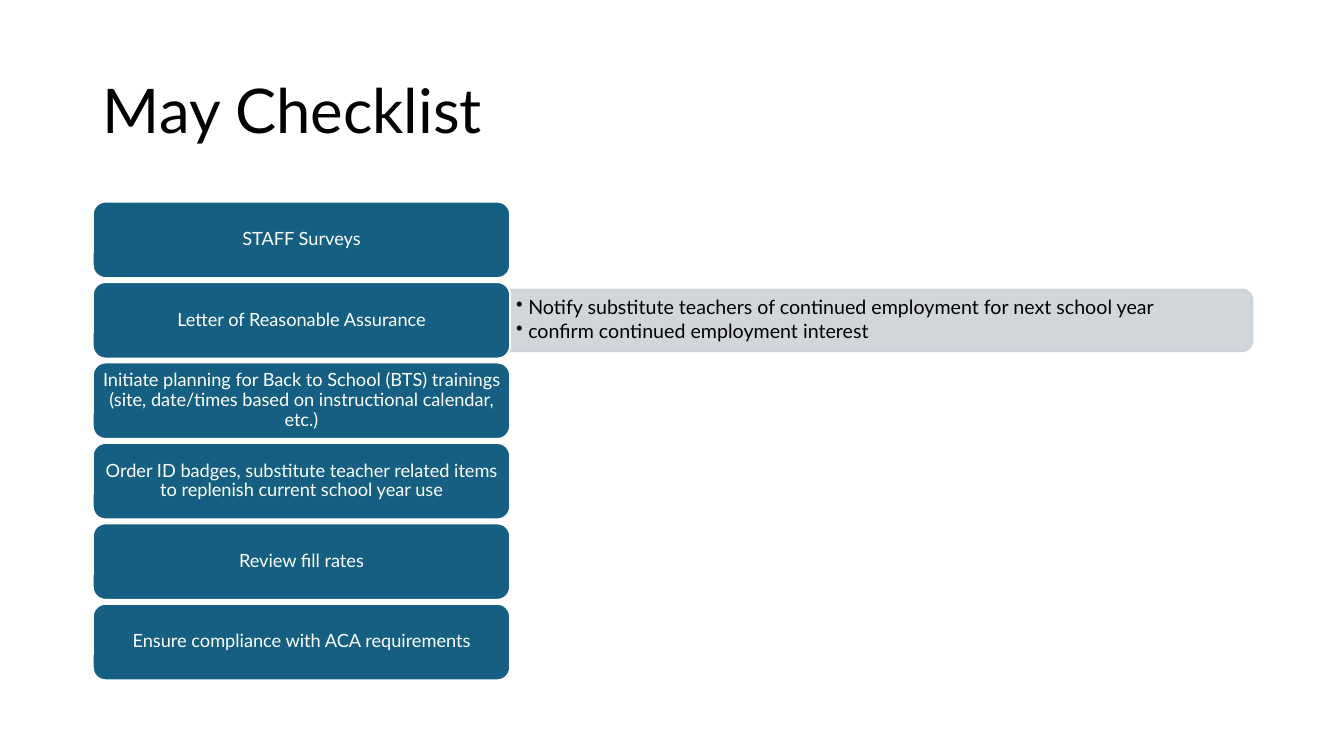
"""Build the May checklist slide: a column of task cards with a detail bar."""
from dataclasses import dataclass

from lxml import etree
from pptx import Presentation
from pptx import util as u
from pptx.dml.color import RGBColor
from pptx.enum import shapes, text
from pptx.oxml.ns import qn

BLACK = RGBColor(0x00, 0x00, 0x00)
WHITE = RGBColor(0xFF, 0xFF, 0xFF)
TEAL = RGBColor(0x15, 0x60, 0x82)
SILVER = RGBColor(0xCC, 0xD2, 0xD8)
FONT = "Lato"

MARGIN = 0.92
FIRST_ROW = 2.0
ROW_PITCH = 3.99 / 5
CARD_WIDTH = 4.14
CARD_HEIGHT = 0.76
BAR_LEFT = MARGIN + CARD_WIDTH
BAR_WIDTH = 7.36
BAR_HEIGHT = 0.61
INDENT = 0.12


@dataclass(frozen=True)
class Task:
    """A card on the checklist and the details beside it."""

    label: str
    details: tuple[str, ...] = ()


TASKS = (
    Task("STAFF Surveys"),
    Task("Letter of Reasonable Assurance", (
        "Notify substitute teachers of continued employment for next school year",
        "confirm continued employment interest",
    )),
    Task("Initiate planning for Back to School (BTS) trainings "
         "(site, date/times based on instructional calendar, etc.)"),
    Task("Order ID badges, substitute teacher related items "
         "to replenish current school year use"),
    Task("Review fill rates"),
    Task("Ensure compliance with ACA requirements"),
)


def write(box, lines: tuple[str, ...], *, size: float, color: RGBColor,
          align=text.PP_ALIGN.LEFT, after: float = 0, bullet: bool = False,
          insets: tuple[float, float] = (0.1, 0.05)) -> None:
    """Fill a shape with vertically centred paragraphs."""
    frame = box.text_frame
    frame.word_wrap = True
    frame.auto_size = text.MSO_AUTO_SIZE.NONE
    frame.vertical_anchor = text.MSO_ANCHOR.MIDDLE
    frame.margin_left = frame.margin_right = u.Inches(insets[0])
    frame.margin_top = frame.margin_bottom = u.Inches(insets[1])
    for index, line in enumerate(lines):
        para = frame.add_paragraph() if index else frame.paragraphs[0]
        para.alignment = align
        para.line_spacing = 0.9
        para.space_before = u.Pt(0)
        para.space_after = u.Pt(after)
        if bullet:
            properties = para._p.get_or_add_pPr()
            properties.set("marL", str(u.Inches(INDENT)))
            properties.set("indent", str(-u.Inches(INDENT)))
            etree.SubElement(properties, qn("a:buChar"), char="•")
        span = para.add_run()
        span.text = line
        span.font.name = FONT
        span.font.size = u.Pt(size)
        span.font.color.rgb = color


def add_block(page, kind, left: float, top: float, width: float, height: float, *,
              fill: RGBColor, line: RGBColor, opacity: int = 100):
    """Add a flat filled shape, with fill and outline at the given opacity."""
    box = page.shapes.add_shape(kind, *map(u.Inches, (left, top, width, height)))
    box.shadow.inherit = False
    box.fill.solid()
    box.fill.fore_color.rgb = fill
    box.line.color.rgb = line
    box.line.width = u.Pt(1.5)
    if opacity < 100:
        for color in box._element.spPr.iter(qn("a:srgbClr")):
            etree.SubElement(color, qn("a:alpha"), val=str(opacity * 1000))
    return box


def add_details(page, task: Task, top: float) -> None:
    """Draw the bar to the right of a card, rounded at its far end."""
    middle_x = BAR_LEFT + BAR_WIDTH / 2
    middle_y = top + CARD_HEIGHT / 2
    bar = add_block(page, shapes.MSO_SHAPE.ROUND_2_SAME_RECTANGLE,
                    middle_x - BAR_HEIGHT / 2, middle_y - BAR_WIDTH / 2,
                    BAR_HEIGHT, BAR_WIDTH, fill=SILVER, line=SILVER, opacity=90)
    bar.rotation = 90
    box = page.shapes.add_textbox(
        *map(u.Inches, (BAR_LEFT, top + 0.1, BAR_WIDTH - 0.03, CARD_HEIGHT - 0.21)))
    write(box, task.details, size=14, color=BLACK, after=2, bullet=True,
          insets=(0.06, 0.03))


def add_task(page, task: Task, row: int) -> None:
    """Draw one card, with its details behind it when it has any."""
    top = FIRST_ROW + row * ROW_PITCH
    if task.details:
        add_details(page, task, top)
    card = add_block(page, shapes.MSO_SHAPE.ROUNDED_RECTANGLE, MARGIN, top,
                     CARD_WIDTH, CARD_HEIGHT, fill=TEAL, line=WHITE)
    write(card, (task.label,), size=13, color=WHITE,
          align=text.PP_ALIGN.CENTER, insets=(0.05, 0.03))


def main() -> None:
    """Build and save the deck."""
    deck = Presentation()
    deck.slide_width, deck.slide_height = u.Inches(13.33), u.Inches(7.5)
    page = deck.slides.add_slide(deck.slide_layouts.get_by_name("Title Only"))
    title = page.shapes.title
    title.left, title.top, title.width, title.height = map(
        u.Inches, (MARGIN, 0.4, 11.5, 1.45))
    write(title, ("May Checklist",), size=44, color=BLACK)
    for row, task in enumerate(TASKS):
        add_task(page, task, row)
    deck.save("out.pptx")


if __name__ == "__main__":
    main()
